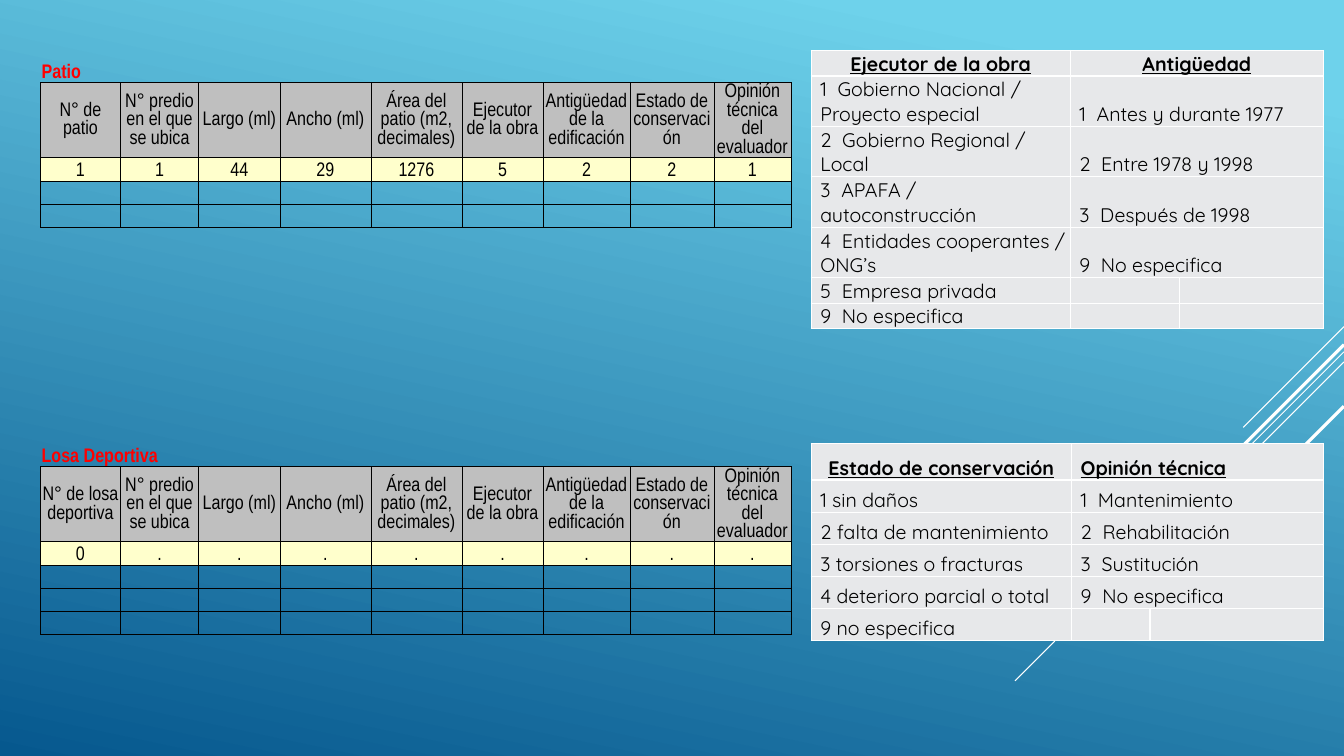
from dataclasses import dataclass
from typing import Optional

from lxml.etree import SubElement
from pptx import Presentation
from pptx.dml.color import RGBColor
from pptx.enum.shapes import MSO_CONNECTOR
from pptx.enum.text import MSO_ANCHOR, PP_ALIGN
from pptx.oxml.ns import qn
from pptx.util import Pt

BLACK = RGBColor(0x00, 0x00, 0x00)
WHITE = RGBColor(0xFF, 0xFF, 0xFF)
RED = RGBColor(0xFF, 0x00, 0x00)
GRAY = RGBColor(0xBF, 0xBF, 0xBF)
YELLOW = RGBColor(0xFF, 0xFF, 0xCC)
PALE = RGBColor(0xE7, 0xE8, 0xEA)
SKY = RGBColor(0x6E, 0xD2, 0xEB)
NAVY = RGBColor(0x06, 0x58, 0x8E)

WIDTH, HEIGHT = 960, 540
NO_STYLE = "{2D5ABB26-0587-4C30-8999-92F81FD0307C}"
FORM_LEFT, CODES_LEFT = 29, 579.5
TOP, BOTTOM = 36, 316.8
FORM_COLS = [57, 56, 58, 65, 65, 58, 62, 60, 55]
FORM_HEADERS = [
    "N° predio en el que se ubica", "Largo (ml)", "Ancho (ml)",
    "Área del patio (m2, decimales)", "Ejecutor de la obra",
    "Antigüedad de la edificación", "Estado de conservación",
    "Opinión técnica del evaluador",
]


@dataclass
class CellStyle:
    font: str = "Arial Narrow"
    color: RGBColor = BLACK
    bold: bool = False
    underline: bool = False
    align: PP_ALIGN = PP_ALIGN.CENTER
    anchor: MSO_ANCHOR = MSO_ANCHOR.BOTTOM
    indent: float = 0.75
    fill: Optional[RGBColor] = None
    border: RGBColor = BLACK
    border_width: float = 0.5
    sides: str = "LRTB"


@dataclass
class Diagonal:
    top: float
    length: float
    width: float


@dataclass
class Form:
    top: float
    title: str
    title_height: float
    title_span: int
    first_header: str
    values: list[str]
    empty_rows: int


@dataclass
class Codes:
    top: float
    cols: list[float]
    heights: list[float]
    rows: list[tuple[str, ...]]
    header_styles: tuple[CellStyle, CellStyle]
    left_style: CellStyle


def codes_style(**changes) -> CellStyle:
    base = dict(font="Quicksand", align=PP_ALIGN.LEFT, indent=6.5, fill=PALE,
                border=WHITE, border_width=1)
    return CellStyle(**{**base, **changes})


TITLE = CellStyle(color=RED, bold=True, align=PP_ALIGN.LEFT, sides="B")
HEADER = CellStyle(anchor=MSO_ANCHOR.MIDDLE, fill=GRAY)
VALUE = CellStyle(fill=YELLOW)
EMPTY = CellStyle()
CODE = codes_style()
CODE_MIDDLE = codes_style(anchor=MSO_ANCHOR.MIDDLE)
CODE_HEADER = codes_style(bold=True, underline=True, align=PP_ALIGN.CENTER, indent=0.75)
CODE_HEADER_LEFT = codes_style(bold=True, underline=True)

DIAGONALS = [
    Diagonal(233.3, 72, 0.75), Diagonal(251.3, 235, 0.75), Diagonal(258.5, 149, 0.75),
    Diagonal(246.2, 137.5, 2.25), Diagonal(290.2, 100, 2.25),
]
FORMS = [
    Form(TOP, "Patio", 23, 3, "N° de patio",
         ["1", "1", "44", "29", "1276", "5", "2", "2", "1"], 2),
    Form(BOTTOM, "Losa Deportiva", 16.6, 2, "N° de losa deportiva",
         ["0"] + ["."] * 8, 3),
]
CODE_TABLES = [
    Codes(TOP, [185, 78, 103], [18] + [36] * 4 + [18] * 2, [
        ("Ejecutor de la obra", "Antigüedad"),
        ("1  Gobierno Nacional / Proyecto especial", "1  Antes y durante 1977"),
        ("2  Gobierno Regional / Local", "2  Entre 1978 y 1998"),
        ("3  APAFA / autoconstrucción", "3  Después de 1998"),
        ("4  Entidades cooperantes / ONG’s", "9  No especifica"),
        ("5  Empresa privada",),
        ("9  No especifica",),
    ], (CODE_HEADER, CODE_HEADER), CODE_MIDDLE),
    Codes(BOTTOM, [186, 56, 124], [26] + [23] * 5, [
        ("Estado de conservación", "Opinión técnica"),
        ("1 sin daños", "1  Mantenimiento"),
        ("2 falta de mantenimiento", "2  Rehabilitación"),
        ("3 torsiones o fracturas", "3  Sustitución"),
        ("4 deterioro parcial o total", "9  No especifica"),
        ("9 no especifica",),
    ], (CODE_HEADER, CODE_HEADER_LEFT), CODE),
]


def add_diagonal(s, line: Diagonal) -> None:
    c = s.shapes.add_connector(
        MSO_CONNECTOR.STRAIGHT, Pt(WIDTH), Pt(line.top),
        Pt(WIDTH - line.length), Pt(line.top + line.length))
    c.line.color.rgb = WHITE
    c.line.width = Pt(line.width)
    SubElement(c._element.spPr, qn("a:effectLst"))


def add_plain_table(s, left: float, top: float, cols: list[float], heights: list[float]):
    frame = s.shapes.add_table(len(heights), len(cols), Pt(left), Pt(top),
                               Pt(sum(cols)), Pt(sum(heights)))
    table = frame.table
    table.first_row = table.horz_banding = False
    table._tbl.tblPr.find(qn("a:tableStyleId")).text = NO_STYLE
    for column, width in zip(table.columns, cols):
        column.width = Pt(width)
    for row, height in zip(table.rows, heights):
        row.height = Pt(height)
    return table


def set_borders(cell, style: CellStyle) -> None:
    tc_pr = cell._tc.get_or_add_tcPr()
    for side in "LRTB":
        ln = SubElement(tc_pr, qn(f"a:ln{side}"), w=str(Pt(style.border_width)))
        if side in style.sides:
            fill = SubElement(ln, qn("a:solidFill"))
            SubElement(fill, qn("a:srgbClr"), val=str(style.border))
        else:
            SubElement(ln, qn("a:noFill"))


def fill_cell(cell, text: str, style: CellStyle) -> None:
    set_borders(cell, style)
    if style.fill is None:
        cell.fill.background()
    else:
        cell.fill.solid()
        cell.fill.fore_color.rgb = style.fill
    cell.margin_left = Pt(style.indent)
    cell.margin_right = cell.margin_top = Pt(0.75)
    cell.margin_bottom = 0
    cell.vertical_anchor = style.anchor
    p = cell.text_frame.paragraphs[0]
    p.alignment = style.align
    if not text:
        # A small end mark keeps empty rows at their set height.
        SubElement(p._p, qn("a:endParaRPr"), sz="1000")
        return
    r = p.add_run()
    r.text = text
    r.font.name = style.font
    r.font.size = Pt(14)
    r.font.bold = style.bold
    r.font.underline = style.underline
    r.font.color.rgb = style.color


def add_form(s, form: Form) -> None:
    blank = [""] * len(FORM_COLS)
    rows = [([form.title] + blank[1:], TITLE, form.title_height),
            ([form.first_header] + FORM_HEADERS, HEADER, 53.5),
            (form.values, VALUE, 16.6)]
    rows += [(blank, EMPTY, 16.6)] * form.empty_rows
    table = add_plain_table(s, FORM_LEFT, form.top, FORM_COLS, [h for _, _, h in rows])
    for i, (texts, style, _) in enumerate(rows):
        for j, text in enumerate(texts):
            fill_cell(table.cell(i, j), text, style)
    table.cell(0, 0).merge(table.cell(0, form.title_span - 1))


def add_codes(s, codes: Codes) -> None:
    table = add_plain_table(s, CODES_LEFT, codes.top, codes.cols, codes.heights)
    for i, texts in enumerate(codes.rows):
        left, right = (codes.left_style, CODE) if i else codes.header_styles
        padded = (*texts, "", "")[:3]
        for j, (text, style) in enumerate(zip(padded, (left, right, right))):
            fill_cell(table.cell(i, j), text, style)
        if len(texts) == 2:
            table.cell(i, 1).merge(table.cell(i, 2))


def main() -> None:
    prs = Presentation()
    prs.slide_width, prs.slide_height = Pt(WIDTH), Pt(HEIGHT)
    s = prs.slides.add_slide(prs.slide_layouts[6])
    background = s.background.fill
    background.gradient()
    background.gradient_angle = 258
    for stop, color, position in zip(background.gradient_stops, (SKY, NAVY), (0.1, 1)):
        stop.color.rgb = color
        stop.position = position
    for line in DIAGONALS:
        add_diagonal(s, line)
    for form in FORMS:
        add_form(s, form)
    for codes in CODE_TABLES:
        add_codes(s, codes)
    prs.save("out.pptx")


if __name__ == "__main__":
    main()
